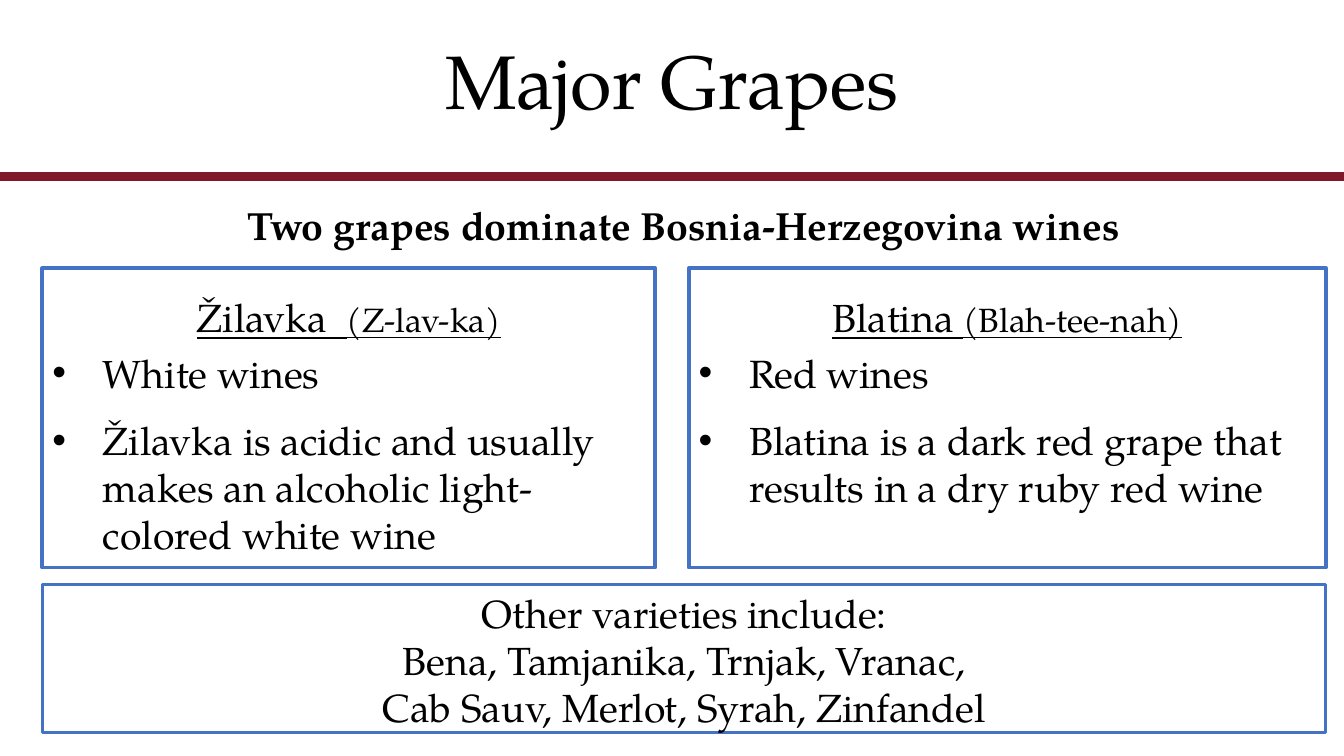
import pptx
import pptx.util
import pptx.dml.color
import pptx.enum.text
import pptx.enum.shapes
import lxml.etree

Inches = pptx.util.Inches
Pt = pptx.util.Pt
ALIGN = pptx.enum.text.PP_ALIGN
ANCHOR = pptx.enum.text.MSO_ANCHOR
FONT = "TeX Gyre Pagella"
BLUE = "4472C4"
WIDTH = 13.33
GRAPES = [
    (0.42, 6.08, "Žilavka  ", "(Z-lav-ka)",
     ["White wines",
      "Žilavka is acidic and usually makes an alcoholic light-colored white wine"]),
    (6.83, 6.32, "Blatina ", "(Blah-tee-nah)",
     ["Red wines",
      "Blatina is a dark red grape that results in a dry ruby red wine"]),
]


def color(code):
    """Turn a hex string into a colour."""
    return pptx.dml.color.RGBColor.from_string(code)


def assign(item, values):
    """Set each attribute named in a dict."""
    for name, value in values.items():
        setattr(item, name, value)


def place(shape, left, top, width, height):
    """Set the position and size of a shape."""
    assign(shape, {"left": Inches(left), "top": Inches(top),
                   "width": Inches(width), "height": Inches(height)})


def frame(shape, anchor=ANCHOR.TOP, inset=0.05):
    """Prepare the text frame of a shape and return it."""
    text = shape.text_frame
    assign(text, {"word_wrap": True, "vertical_anchor": anchor,
                  "auto_size": pptx.enum.text.MSO_AUTO_SIZE.NONE,
                  "margin_top": Inches(inset)})
    return text


def bullet(para, char=None):
    """Give a paragraph a hanging bullet, or none."""
    props = para._p.get_or_add_pPr()
    indent = Inches(0.5) if char else 0
    props.set("marL", str(indent))
    props.set("indent", str(-indent))
    tags = [("buFont", {"typeface": "Arial"}), ("buChar", {"char": char})]
    for tag, values in tags if char else [("buNone", {})]:
        node = lxml.etree.SubElement(props, pptx.oxml.ns.qn("a:" + tag))
        assign_xml(node, values)


def assign_xml(node, values):
    """Set each XML attribute named in a dict."""
    for name, value in values.items():
        node.set(name, value)


def write(text, runs, first=False, char=None, **form):
    """Write one paragraph of (words, size, font values) runs."""
    para = text.paragraphs[0] if first else text.add_paragraph()
    bullet(para, char)
    assign(para, {"alignment": ALIGN.LEFT if char else ALIGN.CENTER,
                  "line_spacing": 1.0, "space_before": Pt(0),
                  "space_after": Pt(0), **form})
    for words, size, values in runs:
        run = para.add_run()
        run.text = words
        assign(run.font, {"name": FONT, "size": Pt(size), **values})
        run.font.color.rgb = color("000000")


def border(shape, width):
    """Give a shape a blue outline and no fill."""
    shape.fill.background()
    shape.line.color.rgb = color(BLUE)
    shape.line.width = Pt(width)


def grape(shape, left, width, name, sound, facts):
    """Fill a body placeholder with one grape and its facts."""
    place(shape, left, 2.66, width, 2.97)
    border(shape, 2.75)
    text = frame(shape, inset=0.25)
    under = {"underline": True}
    write(text, [(name, 28, under), (sound, 24, under)], first=True,
          space_after=Pt(6))
    for index, fact in enumerate(facts):
        write(text, [(fact, 28, {})], char="•", space_before=Pt(14.4 * index))


def rule(slide, top):
    """Draw the dark red line across the slide."""
    line = slide.shapes.add_connector(
        pptx.enum.shapes.MSO_CONNECTOR.STRAIGHT,
        Inches(0), Inches(top), Inches(WIDTH), Inches(top))
    line.line.color.rgb = color("81172A")
    line.line.width = Pt(6)
    lxml.etree.SubElement(line._element.spPr, pptx.oxml.ns.qn("a:effectLst"))


def main():
    """Build and save the slide."""
    deck = pptx.Presentation()
    assign(deck, {"slide_width": Inches(WIDTH), "slide_height": Inches(7.5)})
    slide = deck.slides.add_slide(deck.slide_layouts[3])
    title, *bodies = slide.placeholders
    rule(slide, 1.75)

    place(title, 0, 0.22, WIDTH, 1.24)
    write(frame(title, ANCHOR.MIDDLE), [("Major Grapes", 54, {})],
          first=True, line_spacing=0.9)

    lead = slide.shapes.add_textbox(0, 0, 0, 0)
    place(lead, 0.4, 1.95, 12.76, 0.57)
    write(frame(lead), [("Two grapes dominate Bosnia-Herzegovina wines", 28,
                         {"bold": True})], first=True)

    for body, values in zip(bodies, GRAPES):
        grape(body, *values)

    other = slide.shapes.add_shape(
        pptx.enum.shapes.MSO_SHAPE.RECTANGLE, 0, 0, 0, 0)
    other.shadow.inherit = False
    place(other, 0.42, 5.8, 12.73, 1.47)
    border(other, 2.25)
    text = frame(other)
    for index, words in enumerate(["Other varieties include:",
                                   "Bena, Tamjanika, Trnjak, Vranac,",
                                   "Cab Sauv, Merlot, Syrah, Zinfandel"]):
        write(text, [(words, 28, {})], first=index == 0)
    deck.save("out.pptx")


if __name__ == "__main__":
    main()
